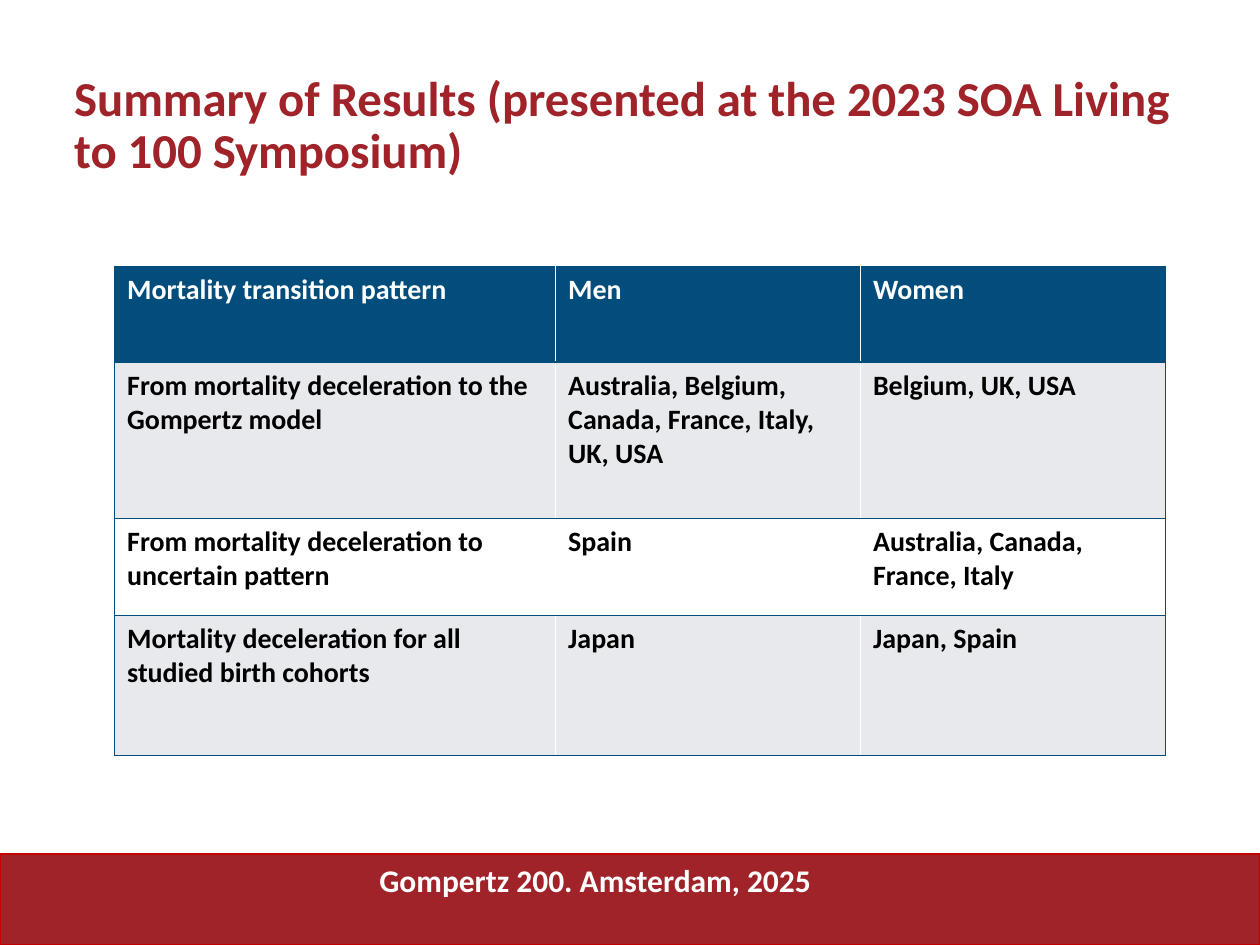
import pptx
import pptx.util
import pptx.dml.color
import pptx.enum.shapes
import pptx.enum.text
import pptx.oxml.ns
import lxml.etree

WIDE, HIGH = 10, 7.5
HUES = {"red": "9F2328", "edge": "C00000", "blue": "024D7C",
        "gray": "E7E9EC", "white": "FFFFFF", "black": "000000"}
COLS = [3.5, 2.42, 2.42]
ROWS = [0.76, 1.24, 0.77, 1.11]
DATA = [
    ["Mortality transition pattern", "Men", "Women"],
    ["From mortality deceleration to the Gompertz model",
     "Australia, Belgium, Canada, France, Italy, UK, USA", "Belgium, UK, USA"],
    ["From mortality deceleration to uncertain pattern", "Spain",
     "Australia, Canada, France, Italy"],
    ["Mortality deceleration for all studied birth cohorts", "Japan",
     "Japan, Spain"],
]


def hue(name):
    return pptx.dml.color.RGBColor.from_string(HUES[name])


def area(left, top, width, height):
    """Turn shares of the slide into lengths."""
    sides = (left * WIDE, top * HIGH, width * WIDE, height * HIGH)
    return [pptx.util.Inches(side) for side in sides]


def add_run(para, text, size, color):
    run = para.add_run()
    run.text = text
    run.font.name = "Calibri"
    run.font.size = pptx.util.Pt(size)
    run.font.bold = True
    run.font.color.rgb = hue(color)


def add_band(slide, box):
    band = slide.shapes.add_shape(
        pptx.enum.shapes.MSO_SHAPE.RECTANGLE, *area(*box))
    band.shadow.inherit = False
    band.fill.solid()
    band.fill.fore_color.rgb = hue("red")
    band.line.color.rgb = hue("edge")
    band.line.width = pptx.util.Pt(1)


def add_text(slide, box, text, size, color, inset=0.05):
    frame = slide.shapes.add_textbox(*area(*box)).text_frame
    frame.word_wrap = True
    frame.margin_top = pptx.util.Inches(inset)
    para = frame.paragraphs[0]
    add_run(para, text, size, color)
    return para


def add_edge(cell, side):
    """Draw one border of a table cell."""
    name = pptx.oxml.ns.qn
    line = lxml.etree.SubElement(
        cell._tc.get_or_add_tcPr(), name("a:ln" + side), w="12700")
    fill = lxml.etree.SubElement(line, name("a:solidFill"))
    lxml.etree.SubElement(fill, name("a:srgbClr"), val=HUES["blue"])


def add_grid(slide, left, top):
    box = area(left, top, sum(COLS) / WIDE, sum(ROWS) / HIGH)
    grid = slide.shapes.add_table(len(ROWS), len(COLS), *box).table
    for col, width in zip(grid.columns, COLS):
        col.width = pptx.util.Inches(width)
    for row, height in zip(grid.rows, ROWS):
        row.height = pptx.util.Inches(height)

    for i, texts in enumerate(DATA):
        shade = "blue" if i == 0 else ("gray" if i % 2 else "white")
        for j, text in enumerate(texts):
            cell = grid.cell(i, j)
            # Outer sides only, plus every horizontal rule
            sides = ["L"] * (j == 0) + ["R"] * (j == len(COLS) - 1)
            for side in sides + ["T", "B"]:
                add_edge(cell, side)
            cell.fill.solid()
            cell.fill.fore_color.rgb = hue(shade)
            add_run(cell.text_frame.paragraphs[0], text, 16,
                    "black" if i else "white")


def main():
    deck = pptx.Presentation()
    deck.slide_width = pptx.util.Inches(WIDE)
    deck.slide_height = pptx.util.Inches(HIGH)
    slide = deck.slides.add_slide(deck.slide_layouts[6])

    # Footer band
    add_band(slide, (0, 0.904, 1, 0.096))
    foot = add_text(slide, (0.19, 0.905, 0.565, 0.053),
                    "Gompertz 200. Amsterdam, 2025", 18, "white")
    foot.alignment = pptx.enum.text.PP_ALIGN.CENTER

    # Title
    title = add_text(
        slide, (0.049, 0.057, 0.925, 0.133),
        "Summary of Results (presented at the 2023 SOA Living"
        " to 100 Symposium)", 27.9, "red", 0.16)
    title.line_spacing = 0.9

    # Results table
    add_grid(slide, 0.091, 0.282)

    deck.save("out.pptx")


if __name__ == "__main__":
    main()
